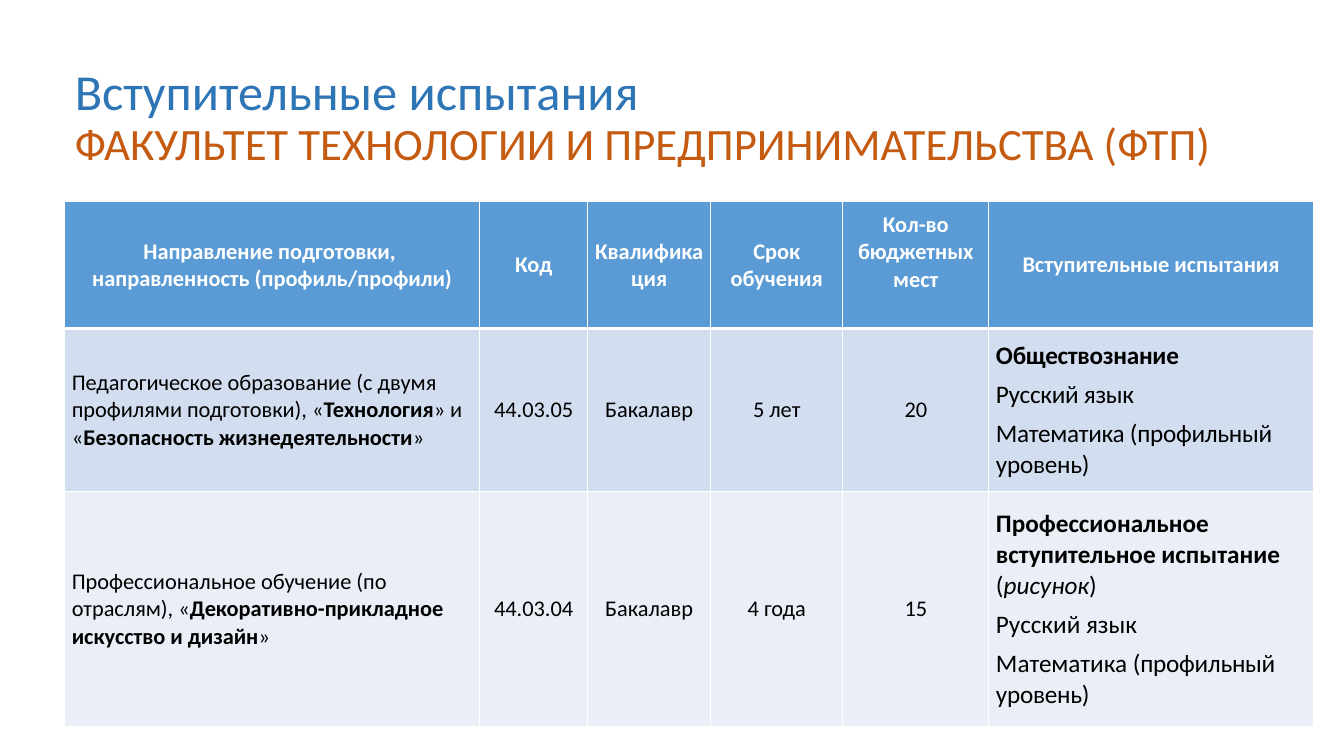
import pptx
import pptx.util
import pptx.dml.color
import pptx.enum.text
import pptx.oxml.ns
from lxml import etree

Cm, Pt = pptx.util.Cm, pptx.util.Pt
ALIGN = pptx.enum.text.PP_ALIGN
MIDDLE = pptx.enum.text.MSO_ANCHOR.MIDDLE
qn = pptx.oxml.ns.qn

TITLE = [
    ("Вступительные испытания", 36, "2E75B6"),
    ("ФАКУЛЬТЕТ ТЕХНОЛОГИИ И ПРЕДПРИНИМАТЕЛЬСТВА (ФТП)", 32, "C55A11"),
]
HEAD = [
    ["Направление подготовки, ", "направленность (профиль/профили)"],
    ["Код"],
    ["Квалификация"],
    ["Срок обучения"],
    ["Кол-во бюджетных мест"],
    ["Вступительные испытания"],
]
# Style letters: b bold, i italic, t tight
ROWS = [
    (
        [("Педагогическое образование (с двумя профилями подготовки), «", ""),
         ("Технология", "b"), ("» и «", ""),
         ("Безопасность жизнедеятельности", "b"), ("»", "")],
        ["44.03.05", "Бакалавр", "5 лет", "20"],
        [[("Обществознание", "bt")],
         [("Русский язык", "t")],
         [("Математика (профильный уровень)", "t")]],
    ),
    (
        [("Профессиональное обучение (по отраслям), «", ""),
         ("Декоративно-прикладное искусство и дизайн", "b"), ("»", "")],
        ["44.03.04", "Бакалавр", "4 года", "15"],
        [[("Профессиональное вступительное испытание ", "b"),
          ("(", ""), ("рисунок", "i"), (")", "")],
         [("Русский язык", "")],
         [("Математика ", ""), ("(профильный уровень)", "t")]],
    ),
]
WIDTHS = [10.46, 2.72, 3.1, 3.33, 3.68, 8.18]
HEIGHTS = [3.2, 4.11, 5.92]
FILLS = ["5B9BD5", "D2DEEF", "EAEFF7"]
LEFT, TOP = 1.63, 5.08


def color(code):
    return pptx.dml.color.RGBColor.from_string(code)


def add_run(para, text, size, code, style=""):
    run = para.add_run()
    run.text = text
    font = run.font
    font.name, font.size = "Calibri", Pt(size)
    font.color.rgb = color(code)
    font.bold, font.italic = "b" in style, "i" in style
    if "t" in style:
        run._r.get_or_add_rPr().set("spc", "-20")


def add_edge(cell, side, width):
    line = etree.SubElement(cell._tc.get_or_add_tcPr(), qn("a:ln" + side), w=str(Pt(width)))
    fill = etree.SubElement(line, qn("a:solidFill"))
    etree.SubElement(fill, qn("a:srgbClr"), val="FFFFFF")


def fill_cell(cell, row, paras, size, code, align, after):
    for side in "LRTB":
        thick = (row, side) in [(0, "B"), (1, "T")]
        add_edge(cell, side, 3 if thick else 1)
    cell.fill.solid()
    cell.fill.fore_color.rgb = color(FILLS[row])
    cell.vertical_anchor = MIDDLE
    cell.margin_left = cell.margin_right = Cm(0.18)
    cell.margin_top = cell.margin_bottom = 0
    frame = cell.text_frame
    for num, runs in enumerate(paras):
        para = frame.add_paragraph() if num else frame.paragraphs[0]
        para.alignment = align
        para.space_after = Pt(after)
        for text, style in runs:
            add_run(para, text, size, code, style)


def add_title(slide):
    title = slide.shapes.title
    title.left, title.top = Cm(LEFT), Cm(1.27)
    title.width, title.height = Cm(sum(WIDTHS)), Cm(3.45)
    frame = title.text_frame
    frame.word_wrap = True
    frame.auto_size = pptx.enum.text.MSO_AUTO_SIZE.NONE
    frame.vertical_anchor = MIDDLE
    para = frame.paragraphs[0]
    para.alignment, para.line_spacing = ALIGN.LEFT, 0.9
    for num, (text, size, code) in enumerate(TITLE):
        if num:
            para.add_line_break()
            etree.SubElement(para._p[-1], qn("a:rPr"), sz="3600")
        add_run(para, text, size, code)


def add_grid(slide):
    table = slide.shapes.add_table(
        len(HEIGHTS), len(WIDTHS), Cm(LEFT), Cm(TOP),
        Cm(sum(WIDTHS)), Cm(sum(HEIGHTS))).table
    for col, width in zip(table.columns, WIDTHS):
        col.width = Cm(width)
    for row, height in zip(table.rows, HEIGHTS):
        row.height = Cm(height)
    for col, lines in enumerate(HEAD):
        paras = [[(text, "b")] for text in lines]
        fill_cell(table.cell(0, col), 0, paras, 16, "FFFFFF", ALIGN.CENTER, 0)
    table.cell(0, 4).margin_bottom = Cm(0.65)
    for row, (name, facts, exams) in enumerate(ROWS, 1):
        fill_cell(table.cell(row, 0), row, [name], 16, "000000", ALIGN.LEFT, 0)
        for col, fact in enumerate(facts, 1):
            fill_cell(table.cell(row, col), row, [[(fact, "")]], 16, "000000", ALIGN.CENTER, 0)
        fill_cell(table.cell(row, 5), row, exams, 18, "000000", ALIGN.LEFT, 6)


def main():
    deck = pptx.Presentation()
    deck.slide_width, deck.slide_height = Cm(33.87), Cm(19.05)
    slide = deck.slides.add_slide(deck.slide_layouts[5])
    add_title(slide)
    add_grid(slide)
    deck.save("out.pptx")


if __name__ == "__main__":
    main()
